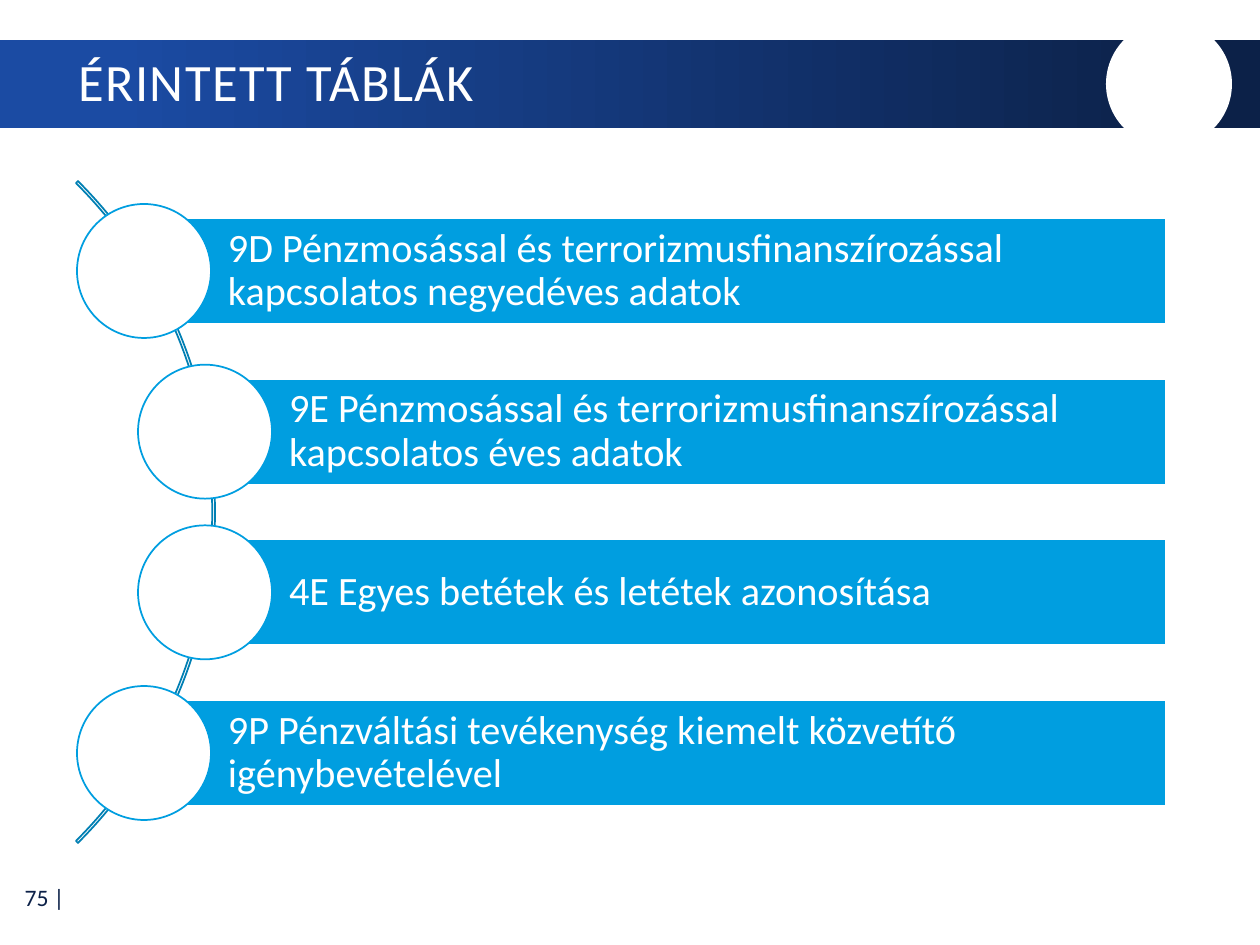
from pptx import Presentation
from pptx.dml.color import RGBColor
from pptx.enum.shapes import MSO_SHAPE
from pptx.enum.text import MSO_ANCHOR, PP_ALIGN
from pptx.util import Pt

RECT, OVAL, ARC = MSO_SHAPE.RECTANGLE, MSO_SHAPE.OVAL, MSO_SHAPE.BLOCK_ARC
MIDDLE = MSO_ANCHOR.MIDDLE
LEFT, RIGHT = PP_ALIGN.LEFT, PP_ALIGN.RIGHT
SCALE = 914400 / 126
HUES = {"royal": "1B4BA3", "navy": "0C2148", "sky": "009EE0",
        "teal": "007FB3", "white": "FFFFFF"}
ROWS = [
    ("9D Pénzmosással és terrorizmusfinanszírozással kapcsolatos negyedéves adatok", 0),
    ("9E Pénzmosással és terrorizmusfinanszírozással kapcsolatos éves adatok", 61),
    ("4E Egyes betétek és letétek azonosítása", 61),
    ("9P Pénzváltási tevékenység kiemelt közvetítő igénybevételével", 0),
]


def px(num):
    return round(num * SCALE)


def hue(name):
    return RGBColor.from_string(HUES[name])


def add_part(slide, kind, box, fill=None, line=None):
    part = slide.shapes.add_shape(kind, *map(px, box))
    part.shadow.inherit = False
    if fill:
        part.fill.solid()
        part.fill.fore_color.rgb = hue(fill)
    else:
        part.fill.background()
    if line:
        part.line.color.rgb = hue(line)
        part.line.width = Pt(1)
    else:
        part.line.fill.background()
    return part


def set_text(shape, text, size, color, align=LEFT, lead=0.9):
    frame = shape.text_frame
    frame.text = text
    frame.word_wrap = True
    frame.vertical_anchor = MIDDLE
    para = frame.paragraphs[0]
    para.alignment = align
    para.line_spacing = lead
    font = para.runs[0].font
    font.name, font.size = "Calibri", Pt(size)
    font.color.rgb = hue(color)
    return frame


def add_head(slide, box, text):
    x, y, w, h = box
    band = add_part(slide, RECT, box, "royal")
    band.fill.gradient()
    band.fill.gradient_angle = 0
    for stop, (pos, name) in zip(band.fill.gradient_stops,
                                 [(0.09, "royal"), (0.95, "navy")]):
        stop.position = pos
        stop.color.rgb = hue(name)
    add_part(slide, OVAL, (x + w - 154, y - 19, 126, 126), "white")

    title = slide.shapes.title
    title.left, title.top = px(x + 66), px(y + 3)
    title.width, title.height = px(1048), px(84)
    frame = set_text(title, text, 30, "white")
    frame.paragraphs[0].runs[0].font._element.set("spc", "80")
    tree = slide.shapes._spTree
    tree.remove(title._element)
    tree.append(title._element)


def add_row(slide, box, text):
    x, y, w, h = box
    ball = h
    inset = 14
    bar = add_part(slide, RECT,
                   (x + ball / 2, y + inset, w - ball / 2, h - 2 * inset),
                   "sky", "white")
    frame = set_text(bar, text, 23, "white")
    frame.margin_left = px(84)
    frame.margin_right = frame.margin_top = frame.margin_bottom = px(8)
    add_part(slide, OVAL, (x, y, ball, ball), "white", "sky")


def add_list(slide, box, rows):
    x, y, w, h = box
    ball = 134
    pitch = (h - ball) / (len(rows) - 1)
    arc = add_part(slide, ARC, (x - 798, y + h / 2 - 468, 936, 936),
                   line="teal")
    for i, val in enumerate((189, 27, 0.003)):
        arc.adjustments[i] = val
    for i, (text, shift) in enumerate(rows):
        add_row(slide, (x + shift, y + i * pitch, w - shift, ball), text)


def add_foot(slide, box, text):
    note = slide.shapes.add_textbox(*map(px, box))
    set_text(note, text, 13.5, "navy", RIGHT, 1)


def main():
    deck = Presentation()
    deck.slide_width, deck.slide_height = px(1260), px(945)
    slide = deck.slides.add_slide(deck.slide_layouts[5])
    add_foot(slide, (1, 874, 76, 47), "75 |")
    add_list(slide, (77, 204, 1089, 616), ROWS)
    add_head(slide, (0, 40, 1260, 88), "ÉRINTETT TÁBLÁK")
    deck.save("out.pptx")


if __name__ == "__main__":
    main()
